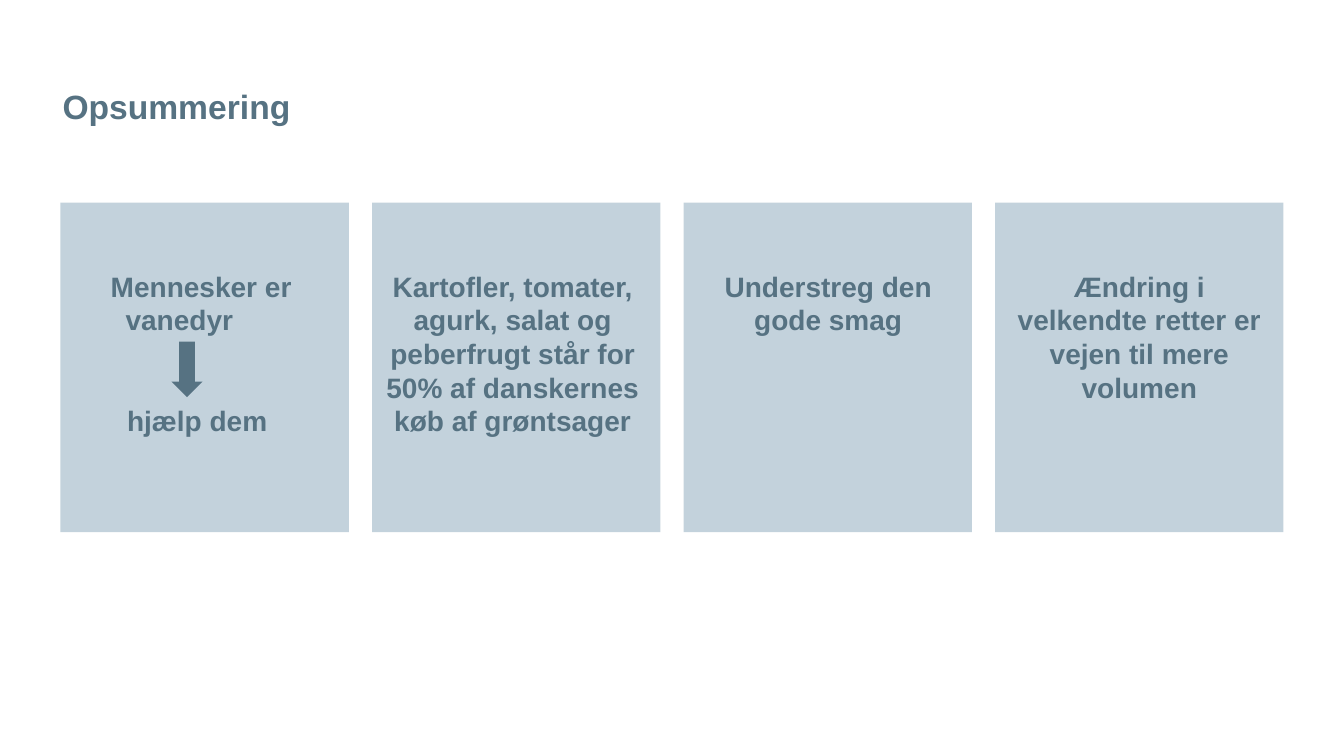
from lxml.etree import SubElement
from pptx import Presentation
from pptx.dml.color import RGBColor
from pptx.enum.shapes import MSO_SHAPE as Shape
from pptx.enum.text import MSO_ANCHOR as Anchor, PP_ALIGN as Align
from pptx.oxml.ns import qn
from pptx.util import Inches, Pt

SLATE = RGBColor(0x56, 0x72, 0x82)
MIST = RGBColor(0xB0, 0xC4, 0xD1)

LEFT, TOP = 0.6, 2.01
WIDE, HIGH, STEP = 2.86, 3.27, 3.09
PAD, DROP = 0.12, 0.66

deck = Presentation()
deck.slide_width, deck.slide_height = Inches(13.33), Inches(7.5)
slide = deck.slides.add_slide(deck.slide_layouts[6])


def write(lines, x, y, w, h, size=20, align=Align.CENTER, gap=0):
    """Add a text box; gap is the space in points before each later line."""
    box = slide.shapes.add_textbox(Inches(x), Inches(y), Inches(w), Inches(h))
    frame = box.text_frame
    frame.word_wrap = True
    frame.vertical_anchor = Anchor.TOP
    frame.margin_left = frame.margin_right = 0
    frame.margin_top = frame.margin_bottom = 0
    for i, line in enumerate(lines):
        para = frame.add_paragraph() if i else frame.paragraphs[0]
        para.alignment = align
        para.line_spacing = Pt(size * 1.2)
        if i:
            para.space_before = Pt(gap)
        run = para.add_run()
        run.text = line
        font = run.font
        font.name, font.size, font.bold = "Arial", Pt(size), True
        font.color.rgb = SLATE


def draw(kind, color, x, y, w, h):
    """Add a flat shape without an outline."""
    shape = slide.shapes.add_shape(
        kind, Inches(x), Inches(y), Inches(w), Inches(h))
    shape.shadow.inherit = False
    shape.fill.solid()
    shape.fill.fore_color.rgb = color
    shape.line.fill.background()
    return shape


# Title
write(["Opsummering"], 0.62, 0.85, 11.72, 0.4, size=24, align=Align.LEFT)

# Cards: text lines, text width, text height
cards = [
    (["Mennesker er vanedyr \t", "hjælp dem "], 2.55, 1.68),
    (["Kartofler, tomater, agurk, salat og peberfrugt står for 50% "
      "af danskernes køb af grøntsager"], 2.55, 1.68),
    (["Understreg den gode smag"], 2.63, 0.67),
    (["Ændring i velkendte retter er vejen til mere volumen"], 2.62, 1.35),
]
for col, (lines, w, h) in enumerate(cards):
    x = LEFT + col * STEP
    card = draw(Shape.RECTANGLE, MIST, x, TOP, WIDE, HIGH)
    tint = card.fill._xPr.find(qn("a:solidFill"))[0]
    SubElement(tint, qn("a:alpha"), val="75000")
    write(lines, x + PAD, TOP + DROP, w, h, gap=48)

# Arrow between the two lines of the first card
draw(Shape.DOWN_ARROW, SLATE, 1.7, 3.39, 0.31, 0.55)

deck.save("out.pptx")
